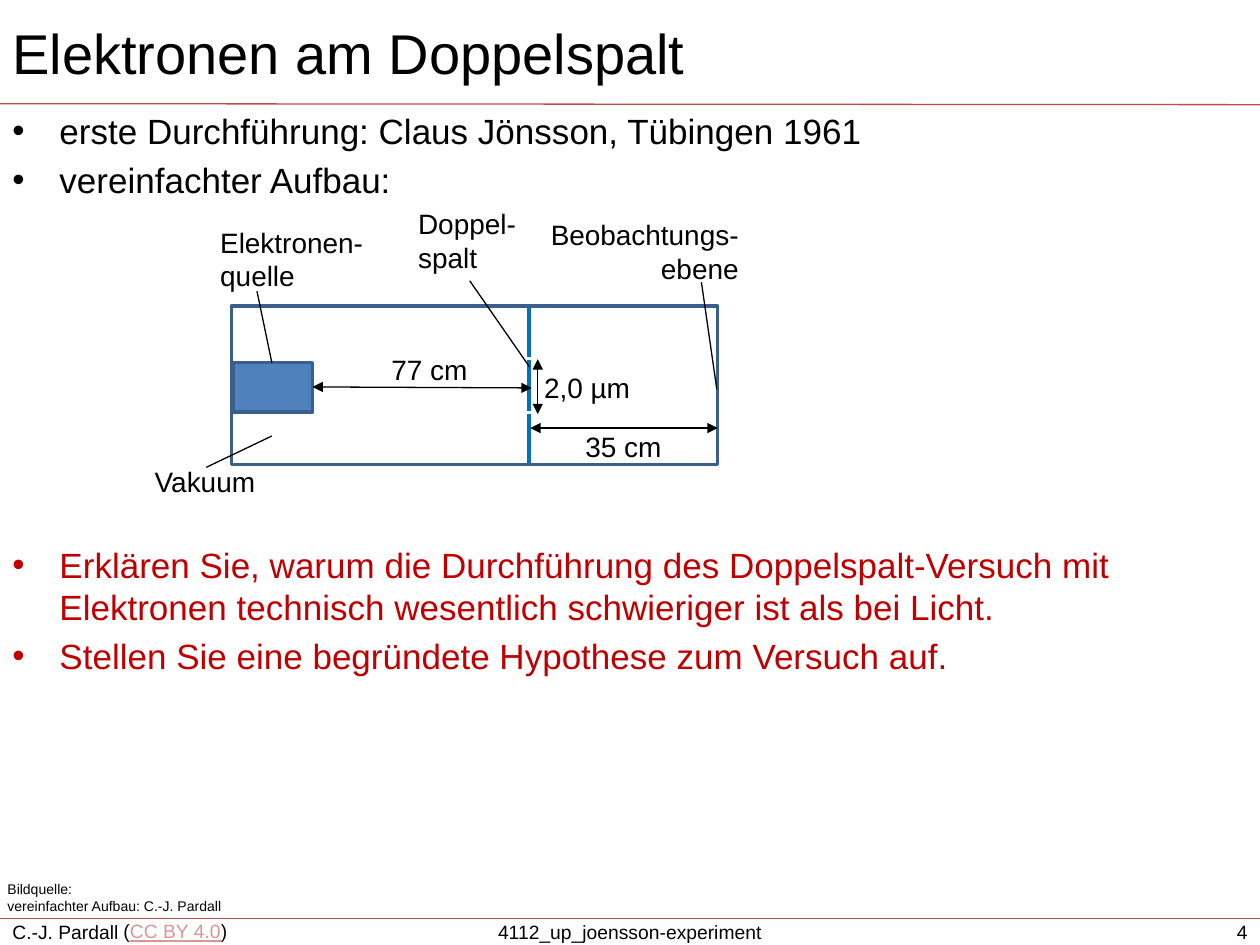
from dataclasses import dataclass

from lxml import etree
from pptx import Presentation
from pptx.dml.color import RGBColor
from pptx.enum.shapes import MSO_CONNECTOR, MSO_SHAPE
from pptx.enum.text import MSO_ANCHOR, PP_ALIGN
from pptx.oxml.ns import qn
from pptx.util import Cm, Pt

LEFT, CENTER, RIGHT = PP_ALIGN.LEFT, PP_ALIGN.CENTER, PP_ALIGN.RIGHT
TOP, MIDDLE = MSO_ANCHOR.TOP, MSO_ANCHOR.MIDDLE
STRAIGHT, RECTANGLE = MSO_CONNECTOR.STRAIGHT, MSO_SHAPE.RECTANGLE


@dataclass(frozen=True)
class Theme:
    """Colours, type sizes (pt) and line widths (pt) of the slide."""
    font: str = "Arial"
    text: str = "000000"
    task: str = "C00000"
    link: str = "D99694"
    rule: str = "BF4C48"
    slit: str = "0070C0"
    source: str = "4F81BD"
    outline: str = "3A5F8C"
    title_size: int = 32
    body_size: int = 20
    label_size: int = 16
    footer_size: int = 11
    credit_size: int = 8
    thin: float = 0.75
    medium: float = 2
    thick: float = 2.25


THEME = Theme()
SLIDE_WIDTH, SLIDE_HEIGHT = 25.4, 19.05
TITLE_HEIGHT, FOOTER_TOP = 2.09, 18.52


def add_run(paragraph, text, size, color=THEME.text, underline=False):
    """Append one formatted run to a paragraph."""
    run = paragraph.add_run()
    run.text = text
    run.font.name = THEME.font
    run.font.size = Pt(size)
    run.font.color.rgb = RGBColor.from_string(color)
    if underline:
        run.font.underline = True


def add_frame(shapes, box, anchor=TOP, inset=None):
    """Add an empty wrapping text box and return its text frame."""
    frame = shapes.add_textbox(*map(Cm, box)).text_frame
    frame.word_wrap = True
    frame.vertical_anchor = anchor
    if inset is not None:
        frame.margin_left = frame.margin_right = Cm(inset)
        frame.margin_top = frame.margin_bottom = Cm(inset)
    return frame


def add_text(shapes, box, text, size, align=LEFT, anchor=TOP):
    """Add a text box holding one paragraph in one style."""
    paragraph = add_frame(shapes, box, anchor).paragraphs[0]
    paragraph.alignment = align
    add_run(paragraph, text, size)


def add_line(shapes, start, end, color=THEME.text, width=THEME.thin, arrows=False):
    """Add a straight line without shadow, optionally with two arrowheads."""
    line = shapes.add_connector(STRAIGHT, *map(Cm, start + end))
    line.line.color.rgb = RGBColor.from_string(color)
    line.line.width = Pt(width)
    properties = line.element.spPr
    if arrows:
        for tag in ("a:headEnd", "a:tailEnd"):
            etree.SubElement(properties.find(qn("a:ln")), qn(tag), type="triangle")
    etree.SubElement(properties, qn("a:effectLst"))


def add_rectangle(shapes, box, fill=None):
    """Add an outlined rectangle, filled if a colour is given."""
    shape = shapes.add_shape(RECTANGLE, *map(Cm, box))
    shape.shadow.inherit = False
    shape.line.color.rgb = RGBColor.from_string(THEME.outline)
    shape.line.width = Pt(THEME.medium)
    if fill:
        shape.fill.solid()
        shape.fill.fore_color.rgb = RGBColor.from_string(fill)
    else:
        shape.fill.background()


def add_title(slide, box, text):
    """Place the title and the rule below it."""
    left, top, width, height = box
    add_text(slide.shapes, box, text, THEME.title_size, anchor=MIDDLE)
    bottom = top + height
    add_line(slide.shapes, (left, bottom), (left + width, bottom + 0.02), THEME.rule)


def add_bullets(slide, box, items, color):
    """Place a bulleted list with hanging indents."""
    frame = add_frame(slide.shapes, box)
    for index, item in enumerate(items):
        paragraph = frame.add_paragraph() if index else frame.paragraphs[0]
        paragraph.space_before = Pt(THEME.body_size * 0.2)
        add_run(paragraph, item, THEME.body_size, color)
        properties = paragraph._p.get_or_add_pPr()
        properties.set("marL", str(Cm(0.95)))
        properties.set("indent", str(-Cm(0.95)))
        etree.SubElement(properties, qn("a:buFont"), typeface=THEME.font)
        etree.SubElement(properties, qn("a:buChar"), char="•")


def add_experiment(slide, box):
    """Draw the double-slit apparatus in its vacuum chamber with labels."""
    left, top, width, height = box
    shapes = slide.shapes.add_group_shape().shapes

    def at(x, y):
        return left + x, top + y

    slit_x, slit_length, slit_pitch = 6, 1.02, 1.09
    for index in range(3):
        y = index * slit_pitch
        add_line(shapes, at(slit_x, y), at(slit_x, y + slit_length),
                 THEME.slit, THEME.thick)
    add_rectangle(shapes, at(0.03, 1.14) + (1.6, 1), THEME.source)
    add_rectangle(shapes, box)

    labels = [
        ("Elektronen-quelle", -0.48, -1.75, 3.4, 1.63, LEFT),
        ("Doppel-spalt", 3.51, -2.13, 2.59, 1.63, LEFT),
        ("Beobachtungs-ebene", 6.15, -1.9, 4.32, 1.63, RIGHT),
        ("Vakuum", -1.8, 3.07, 2.69, 0.94, LEFT),
        ("2,0 µm", 6.05, 1.17, 2.31, 0.94, LEFT),
        ("35 cm", 6.88, 2.36, 2.31, 0.94, LEFT),
        ("77 cm", 2.97, 0.81, 2.31, 0.94, LEFT),
    ]
    for text, x, y, label_width, label_height, align in labels:
        add_text(shapes, at(x, y) + (label_width, label_height), text,
                 THEME.label_size, align)

    leaders = [
        ((0.51, -0.3), (0.81, 1.14)),
        ((4.8, -0.51), (slit_x, 1.22)),
        ((9.47, -0.48), (width - 0.02, 1.68)),
        ((0.81, 2.62), (-0.51, 3.25)),
    ]
    dimensions = [
        ((6.17, 1.07), (6.17, 2.18)),
        ((6.02, 2.46), (width, 2.46)),
        ((1.63, 1.63), (6.05, 1.65)),
    ]
    for lines, arrows in ((leaders, False), (dimensions, True)):
        for start, end in lines:
            add_line(shapes, at(*start), at(*end), arrows=arrows)


def add_credit(slide, box, lines):
    """Place the source credit in small type."""
    frame = add_frame(slide.shapes, box)
    for index, line in enumerate(lines):
        paragraph = frame.add_paragraph() if index else frame.paragraphs[0]
        add_run(paragraph, line, THEME.credit_size)


def add_footer(slide, box, author, file_name, number):
    """Place the footer rule, author, licence, file name and page number."""
    left, top, width, height = box
    add_line(slide.shapes, (left, top), (left + width, top), THEME.rule)
    third = 8.05
    columns = [
        (author, left, 5.92, LEFT),
        (file_name, left + (width - third) / 2, third, CENTER),
        (number, left + width - third, third, RIGHT),
    ]
    for text, x, column_width, align in columns:
        add_text(slide.shapes, (x, top, column_width, height), text,
                 THEME.footer_size, align, MIDDLE)
    licence = add_frame(slide.shapes, (left + 2.49, top + 0.02, 2.8, 0.48), inset=0)
    add_run(licence.paragraphs[0], "(", THEME.footer_size)
    add_run(licence.paragraphs[0], "CC BY 4.0", THEME.footer_size, THEME.link, True)
    add_run(licence.paragraphs[0], ")", THEME.footer_size)


def main():
    """Build the slide and save the presentation."""
    presentation = Presentation()
    presentation.slide_width, presentation.slide_height = Cm(SLIDE_WIDTH), Cm(SLIDE_HEIGHT)
    slide = presentation.slides.add_slide(presentation.slide_layouts[6])
    add_title(slide, (0, 0, SLIDE_WIDTH, TITLE_HEIGHT), "Elektronen am Doppelspalt")
    add_bullets(slide, (0, TITLE_HEIGHT, SLIDE_WIDTH, 2.2), [
        "erste Durchführung: Claus Jönsson, Tübingen 1961",
        "vereinfachter Aufbau:",
    ], THEME.text)
    add_experiment(slide, (4.67, 6.17, 9.8, 3.2))
    add_bullets(slide, (0, 10.83, SLIDE_WIDTH, 3.2), [
        "Erklären Sie, warum die Durchführung des Doppelspalt-Versuch mit "
        "Elektronen technisch wesentlich schwieriger ist als bei Licht.",
        "Stellen Sie eine begründete Hypothese zum Versuch auf.",
    ], THEME.task)
    add_credit(slide, (-0.1, 17.63, SLIDE_WIDTH, 0.94),
               ["Bildquelle:", "vereinfachter Aufbau: C.-J. Pardall"])
    add_footer(slide, (0, FOOTER_TOP, SLIDE_WIDTH, SLIDE_HEIGHT - FOOTER_TOP),
               "C.-J. Pardall", "4112_up_joensson-experiment", "4")
    presentation.save("out.pptx")


if __name__ == "__main__":
    main()
